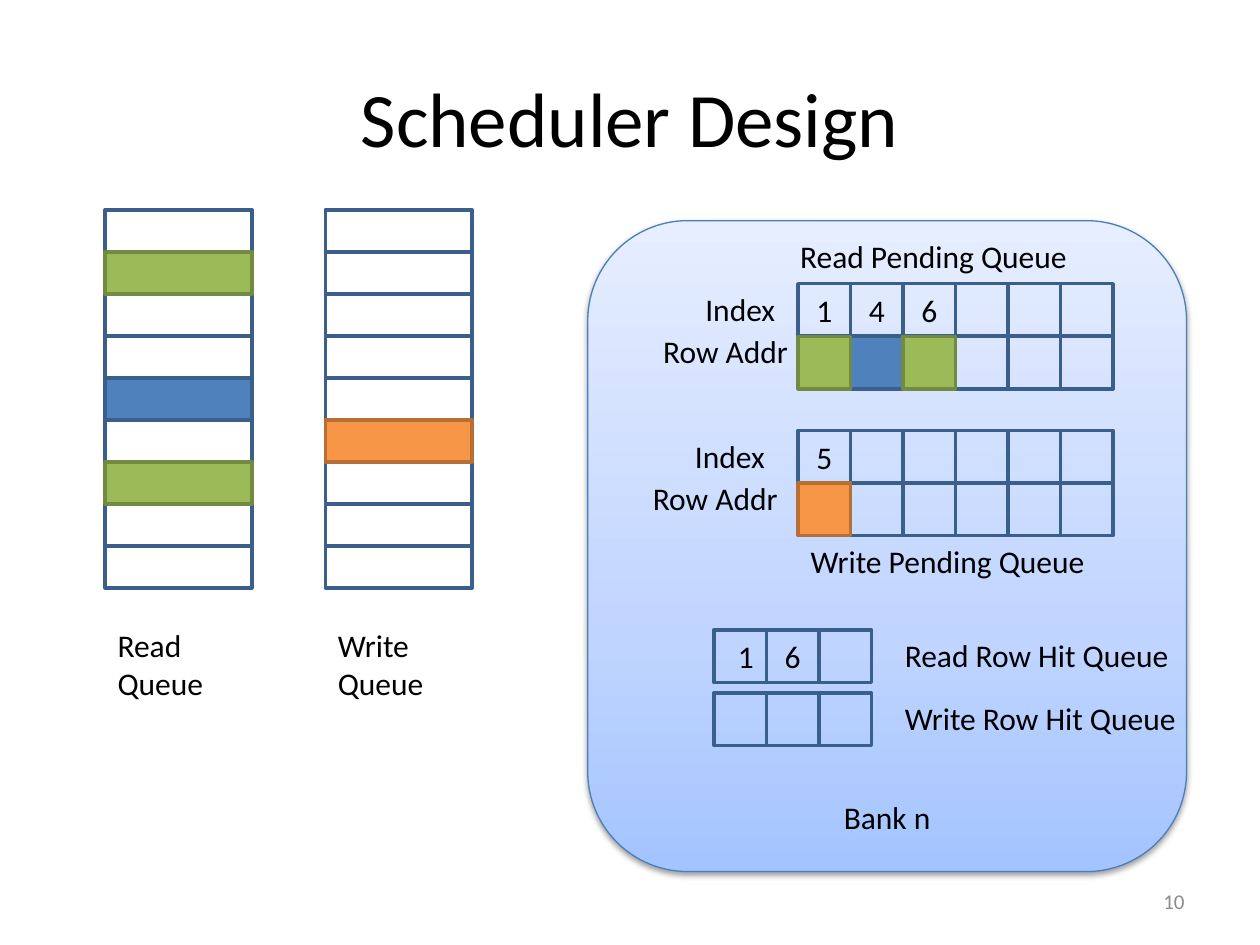
from copy import deepcopy
from lxml import etree
from pptx import Presentation, util as u
from pptx.dml.color import RGBColor
from pptx.enum import shapes, text
from pptx.oxml.ns import qn

COLOURS = {
    "ink": "000000", "muted": "8C8C8C",
    "blue": "4F81BD", "blue_edge": "3A5F8C",
    "green": "9BBB59", "green_edge": "738A42",
    "orange": "F79646", "orange_edge": "B76F34",
    "bank_low": "A4C4FF", "bank_mid": "BFD4FF", "bank_high": "E6EEFF", "bank_edge": "4B7EBC",
}
LAYERS = ("", "blue", "orange", "green")
LEFT, CENTER, RIGHT = text.PP_ALIGN.LEFT, text.PP_ALIGN.CENTER, text.PP_ALIGN.RIGHT
TOP, MIDDLE, BOTTOM = text.MSO_ANCHOR.TOP, text.MSO_ANCHOR.MIDDLE, text.MSO_ANCHOR.BOTTOM


def colour(name):
    return RGBColor.from_string(COLOURS[name])


class SlideBuilder:
    """Draws styled scheduler elements, measured in centimetres, on one page."""

    def __init__(self, page, font="Calibri", size=18):
        self.page, self.font, self.size = page, font, size

    def set_words(self, box, words, align=LEFT, anchor=TOP, size=None, ink="ink"):
        frame = box.text_frame
        for name, value in {"word_wrap": True, "vertical_anchor": anchor}.items():
            setattr(frame, name, value)
        para = frame.paragraphs[0]
        para.alignment = align
        span = para.add_run()
        span.text = words
        for name, value in {"name": self.font, "size": u.Pt(size or self.size)}.items():
            setattr(span.font, name, value)
        span.font.color.rgb = colour(ink)

    def label(self, words, left, top, width, height=1.03, **style):
        box = self.page.shapes.add_textbox(*map(u.Cm, (left, top, width, height)))
        self.set_words(box, words, **style)

    def shape(self, kind, left, top, width, height, edge, weight):
        box = self.page.shapes.add_shape(kind, *map(u.Cm, (left, top, width, height)))
        box.shadow.inherit = False
        box.line.color.rgb = colour(edge)
        box.line.width = u.Pt(weight)
        return box

    def cell(self, left, top, width, height, fill="", words="", align=CENTER):
        box = self.shape(shapes.MSO_SHAPE.RECTANGLE, left, top, width, height,
                         f"{fill or 'blue'}_edge", 2)
        if fill:
            box.fill.solid()
            box.fill.fore_color.rgb = colour(fill)
        else:
            box.fill.background()
        if words:
            self.set_words(box, words, align, MIDDLE)

    def grid(self, left, top, width, height, columns, rows, fills=None, words=None, aligns=None):
        fills, words, aligns = fills or {}, words or {}, aligns or {}
        step_x, step_y = width / columns, height / rows
        slots = [(row, column) for row in range(rows) for column in range(columns)]
        for slot in sorted(slots, key=lambda slot: LAYERS.index(fills.get(slot, ""))):
            row, column = slot
            self.cell(left + column * step_x, top + row * step_y, step_x, step_y,
                      fills.get(slot, ""), words.get(slot, ""), aligns.get(slot, CENTER))

    def panel(self, words, left, top, width, height):
        box = self.shape(shapes.MSO_SHAPE.ROUNDED_RECTANGLE, left, top, width, height,
                         "bank_edge", 0.75)
        box.fill.gradient()
        box.fill.gradient_angle = 90
        properties = box._element.spPr
        stops = properties.find(".//" + qn("a:gsLst"))
        stops.append(deepcopy(stops[0]))
        shades = ((0, "bank_low"), (0.35, "bank_mid"), (1, "bank_high"))
        for stop, (position, shade) in zip(box.fill.gradient_stops, shades):
            stop.position = position
            stop.color.rgb = colour(shade)
        shadow = etree.SubElement(properties.find(qn("a:effectLst")), qn("a:outerShdw"),
                                  blurRad="40000", dist="20000", dir="5400000", rotWithShape="0")
        tint = etree.SubElement(shadow, qn("a:srgbClr"), val=COLOURS["ink"])
        etree.SubElement(tint, qn("a:alpha"), val="38000")
        self.set_words(box, words, CENTER, BOTTOM)


def main():
    deck = Presentation()
    deck.slide_width, deck.slide_height = u.Cm(25.4), u.Cm(19.05)
    draw = SlideBuilder(deck.slides.add_slide(deck.slide_layouts[6]))

    draw.panel("Bank n", 11.85, 4.45, 12.07, 13.12)
    draw.label("Scheduler Design", 1.27, 0.76, 22.86, 3.18, align=CENTER, anchor=MIDDLE, size=44)
    draw.label("10", 18.2, 17.66, 5.93, 1.01, align=RIGHT, anchor=MIDDLE, size=12, ink="muted")

    queues = (
        ("Read Queue", 2.12, {(1, 0): "green", (4, 0): "blue", (6, 0): "green"}),
        ("Write Queue", 6.56, {(5, 0): "orange"}),
    )
    for name, left, fills in queues:
        draw.grid(left, 4.23, 2.96, 7.62, 1, 9, fills)
        draw.label(name, left, 12.49, 2.96, 1.8)

    pending = (
        ("Read Pending Queue", 15.88, 4.66, 5.72, 13.97, "146", ("green", "blue", "green")),
        ("Write Pending Queue", 16.09, 10.8, 8.68, 13.76, "5", ("orange",)),
    )
    for name, name_left, name_top, top, index_left, indexes, rows in pending:
        draw.grid(16.09, top, 6.35, 2.12, 6, 2,
                  {(1, column): fill for column, fill in enumerate(rows)},
                  {(0, column): index for column, index in enumerate(indexes)})
        draw.label(name, name_left, name_top, 6.35)
        draw.label("Index", index_left, top, 2.12)
        draw.label("Row Addr", index_left - 0.85, top + 0.85, 3.39)

    hits = (
        ("Read Row Hit Queue", 12.7, {(0, 0): "1", (0, 1): "6"}),
        ("Write Row Hit Queue", 13.97, {}),
    )
    for name, top, words in hits:
        draw.grid(14.39, top, 3.18, 1.06, 3, 1, words=words, aligns={(0, 0): RIGHT})
        draw.label(name, 17.99, top, 6.14)

    deck.save("out.pptx")


if __name__ == "__main__":
    main()
